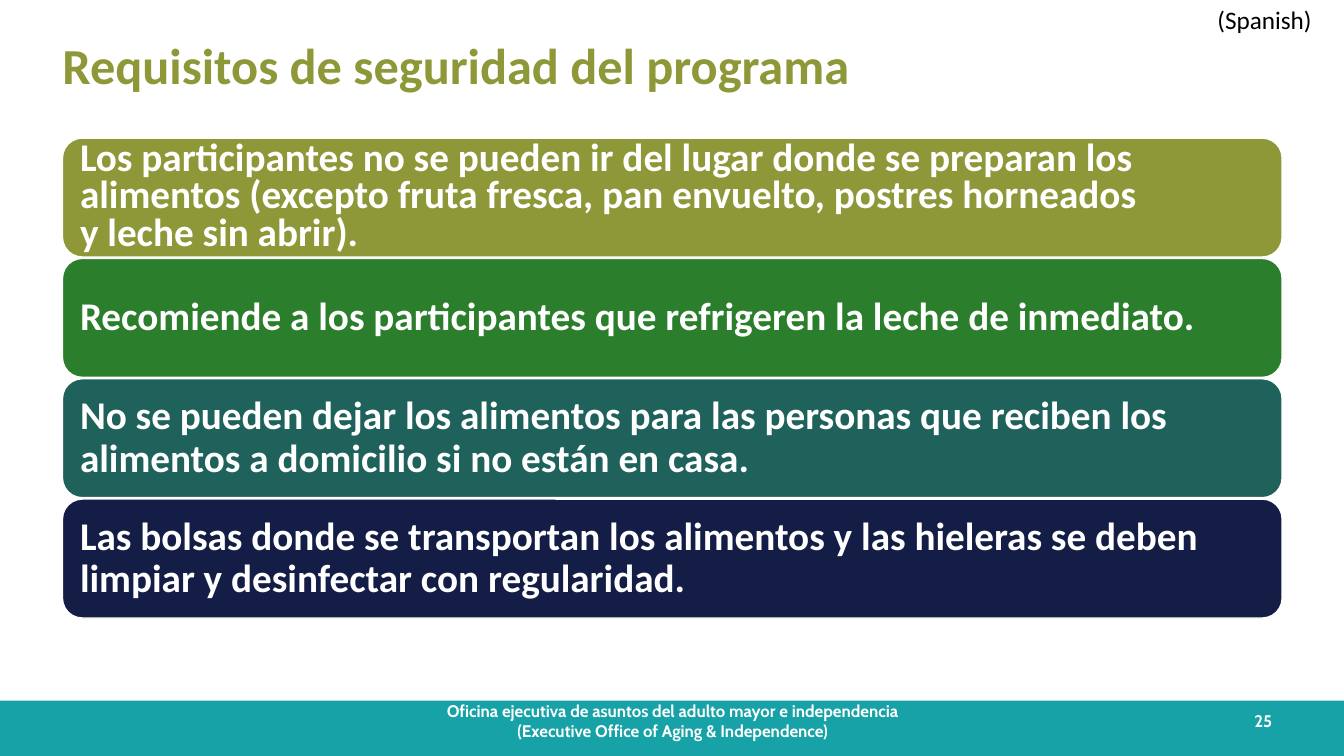
from dataclasses import dataclass

from pptx import Presentation
from pptx.dml.color import RGBColor
from pptx.enum.shapes import MSO_SHAPE
from pptx.enum.text import MSO_ANCHOR, PP_ALIGN
from pptx.shapes.autoshape import Shape
from pptx.slide import Slide
from pptx.util import Pt

RECTANGLE = MSO_SHAPE.RECTANGLE
ROUNDED = MSO_SHAPE.ROUNDED_RECTANGLE
TOP, MIDDLE = MSO_ANCHOR.TOP, MSO_ANCHOR.MIDDLE
LEFT, CENTER, RIGHT = PP_ALIGN.LEFT, PP_ALIGN.CENTER, PP_ALIGN.RIGHT

WHITE, BLACK, OLIVE, TEAL = "FFFFFF", "000000", "8E9838", "16A2A7"
MARGIN, CONTENT_WIDTH = 44.64, 871.2
FOOTER_TOP, FOOTER_TEXT_HEIGHT = 500.4, 28.8
CARDS_TOP, CARD_HEIGHT, CARD_STEP = 98.64, 84.96, 85.95


@dataclass(frozen=True)
class Box:
    left: float
    top: float
    width: float
    height: float


@dataclass(frozen=True)
class Requirement:
    text: str
    fill: str
    line_spacing: float = 0.9


REQUIREMENTS = [
    Requirement(
        "Los participantes no se pueden ir del lugar donde se preparan los alimentos "
        "(excepto fruta fresca, pan envuelto, postres horneados \ny leche sin abrir).",
        "8F9838",
        line_spacing=0.8,
    ),
    Requirement(
        "Recomiende a los participantes que refrigeren la leche de inmediato.",
        "2B7E2B",
    ),
    Requirement(
        "No se pueden dejar los alimentos para las personas que reciben los "
        "alimentos a domicilio si no están en casa.",
        "1F625C",
    ),
    Requirement(
        "Las bolsas donde se transportan los alimentos y las hieleras se deben "
        "limpiar y desinfectar con regularidad.",
        "141D45",
    ),
]


def color(value: str) -> RGBColor:
    return RGBColor.from_string(value)


def write_text(
    shape: Shape,
    text: str,
    *,
    size: float,
    font: str = "Calibri",
    fill: str = WHITE,
    bold: bool = True,
    align: PP_ALIGN = LEFT,
    anchor: MSO_ANCHOR = MIDDLE,
    inset_x: float = 7.2,
    inset_y: float = 3.6,
    line_spacing: float = 1.0,
    wrap: bool = True,
) -> None:
    frame = shape.text_frame
    frame.word_wrap = wrap
    frame.vertical_anchor = anchor
    frame.margin_left = frame.margin_right = Pt(inset_x)
    frame.margin_top = frame.margin_bottom = Pt(inset_y)
    paragraph = frame.paragraphs[0]
    paragraph.text = text
    paragraph.alignment = align
    paragraph.line_spacing = line_spacing
    for run in paragraph.runs:
        run.font.name = font
        run.font.size = Pt(size)
        run.font.bold = bold
        run.font.color.rgb = color(fill)


def add_text_box(slide: Slide, box: Box) -> Shape:
    return slide.shapes.add_textbox(
        Pt(box.left), Pt(box.top), Pt(box.width), Pt(box.height)
    )


def add_filled_shape(
    slide: Slide, kind: MSO_SHAPE, box: Box, fill: str, outline: str | None = None
) -> Shape:
    shape = slide.shapes.add_shape(
        kind, Pt(box.left), Pt(box.top), Pt(box.width), Pt(box.height)
    )
    shape.shadow.inherit = False
    shape.fill.solid()
    shape.fill.fore_color.rgb = color(fill)
    if outline is None:
        shape.line.fill.background()
    else:
        shape.line.color.rgb = color(outline)
        shape.line.width = Pt(1)
    return shape


def add_footer(slide: Slide) -> None:
    add_filled_shape(slide, RECTANGLE, Box(0, FOOTER_TOP, 960, 39.6), TEAL)
    office = add_text_box(slide, Box(302.4, FOOTER_TOP, 356.4, FOOTER_TEXT_HEIGHT))
    write_text(
        office,
        "Oficina ejecutiva de asuntos del adulto mayor e independencia "
        "(Executive Office of Aging & Independence)",
        size=12,
        font="Cabin",
        align=CENTER,
    )
    number = add_text_box(slide, Box(879.12, FOOTER_TOP, 36.72, FOOTER_TEXT_HEIGHT))
    write_text(number, "25", size=12, font="Cabin", align=RIGHT)


def add_heading(slide: Slide) -> None:
    language = add_text_box(slide, Box(862.56, -0.72, 84.24, 28.8))
    write_text(
        language, "(Spanish)", size=18, fill=BLACK, bold=False, anchor=TOP, wrap=False
    )
    title = add_text_box(slide, Box(MARGIN, 30.24, CONTENT_WIDTH, 31.68))
    write_text(
        title,
        "Requisitos de seguridad del programa",
        size=36,
        fill=OLIVE,
        inset_x=0,
        inset_y=0,
    )


def add_requirements(slide: Slide) -> None:
    for index, requirement in enumerate(REQUIREMENTS):
        top = CARDS_TOP + index * CARD_STEP
        box = Box(MARGIN, top, CONTENT_WIDTH, CARD_HEIGHT)
        card = add_filled_shape(slide, ROUNDED, box, requirement.fill, WHITE)
        write_text(
            card,
            requirement.text,
            size=28,
            inset_x=8.4,
            inset_y=8.4,
            line_spacing=requirement.line_spacing,
        )


def main() -> None:
    presentation = Presentation()
    presentation.slide_width = Pt(960)
    presentation.slide_height = Pt(540)
    slide = presentation.slides.add_slide(presentation.slide_layouts[6])
    add_footer(slide)
    add_heading(slide)
    add_requirements(slide)
    presentation.save("out.pptx")


if __name__ == "__main__":
    main()
